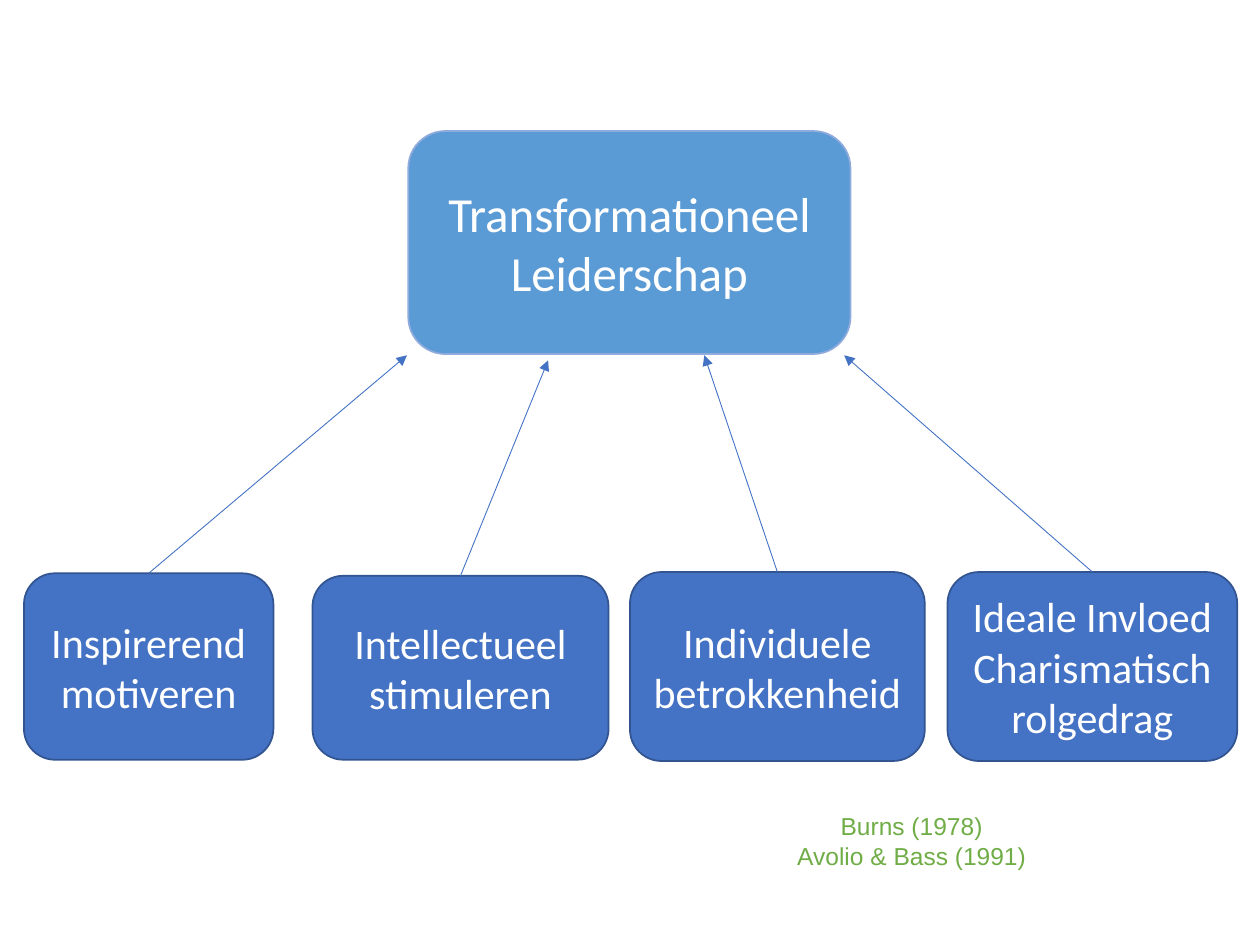
"""Build a slide on the four parts of transformational leadership."""
from typing import NamedTuple

from pptx import Presentation
from pptx import util as u
from pptx.dml.color import RGBColor
from pptx.enum import shapes, text
from pptx.oxml.ns import qn
from lxml import etree

WIDE, HIGH = u.Inches(10), u.Inches(7.5)
COLS, ROWS = 100, 75
BLUE, EDGE, WHITE = "4472C4", "325491", "FFFFFF"


class Area(NamedTuple):
    """Place on the grid, in columns and rows."""
    left: float
    top: float
    wide: float
    high: float


class Part(NamedTuple):
    """One lower box and the grid point its arrow leads to."""
    words: str
    area: Area
    tip: tuple[float, float]


PARTS = [
    Part("Inspirerend motiveren", Area(1.9, 45.5, 19.8, 14.8), (32.3, 28.2)),
    Part("Intellectueel stimuleren", Area(24.8, 45.7, 23.5, 14.6), (43.5, 28.6)),
    Part("Individuele betrokkenheid", Area(50, 45.4, 23.4, 15), (55.9, 28.2)),
    Part("Ideale Invloed\nCharismatisch rolgedrag", Area(75.2, 45.4, 23, 15), (67, 28.2)),
]


def tint(code: str) -> RGBColor:
    """Turn a hex string into a colour."""
    return RGBColor.from_string(code)


def col(n: float) -> int:
    """Give the length of n columns."""
    return round(WIDE * n / COLS)


def row(n: float) -> int:
    """Give the length of n rows."""
    return round(HIGH * n / ROWS)


def place(area: Area) -> tuple[int, int, int, int]:
    """Turn a grid area into lengths."""
    return col(area.left), row(area.top), col(area.wide), row(area.high)


def write(shape, words: str, size: int, font: str, code: str) -> None:
    """Set centred, wrapped text and format its runs."""
    frame = shape.text_frame
    frame.word_wrap = True
    frame.text = words
    for para in frame.paragraphs:
        para.alignment = text.PP_ALIGN.CENTER
        for run in para.runs:
            run.font.size = u.Pt(size)
            run.font.name = font
            run.font.color.rgb = tint(code)


def box(slide, words: str, area: Area, size: int = 24, fill: str = BLUE, edge: str = EDGE):
    """Draw a rounded box with white text."""
    shape = slide.shapes.add_shape(shapes.MSO_SHAPE.ROUNDED_RECTANGLE, *place(area))
    shape.shadow.inherit = False
    shape.fill.solid()
    shape.fill.fore_color.rgb = tint(fill)
    shape.line.color.rgb = tint(edge)
    shape.line.width = u.Pt(1)
    shape.text_frame.vertical_anchor = text.MSO_ANCHOR.MIDDLE
    write(shape, words, size, "Calibri", WHITE)
    return shape


def arrow(slide, base, tip: tuple[float, float]) -> None:
    """Draw an arrow from the top of a box to a grid point."""
    end = col(tip[0]), row(tip[1])
    line = slide.shapes.add_connector(shapes.MSO_CONNECTOR.STRAIGHT, base.left, base.top, *end)
    line.begin_connect(base, 0)
    line.line.color.rgb = tint(BLUE)
    line.line.width = u.Pt(0.5)
    etree.SubElement(line.line._get_or_add_ln(), qn("a:tailEnd"), type="triangle")
    etree.SubElement(line._element.spPr, qn("a:effectLst"))


def main() -> None:
    """Draw the slide and save it."""
    deck = Presentation()
    deck.slide_width, deck.slide_height = WIDE, HIGH
    slide = deck.slides.add_slide(deck.slide_layouts[6])
    bases = [box(slide, part.words, part.area) for part in PARTS]
    box(slide, "Transformationeel Leiderschap", Area(32.4, 10.4, 35.1, 17.7), 28, "5B9BD5", "8FAADC")
    for base, part in zip(bases, PARTS):
        arrow(slide, base, part.tip)
    note = slide.shapes.add_textbox(*place(Area(61.9, 63.9, 20.9, 5.7)))
    write(note, "Burns (1978)\nAvolio & Bass (1991)", 14, "Arial", "70AD47")
    note.text_frame.auto_size = text.MSO_AUTO_SIZE.SHAPE_TO_FIT_TEXT
    deck.save("out.pptx")


if __name__ == "__main__":
    main()
